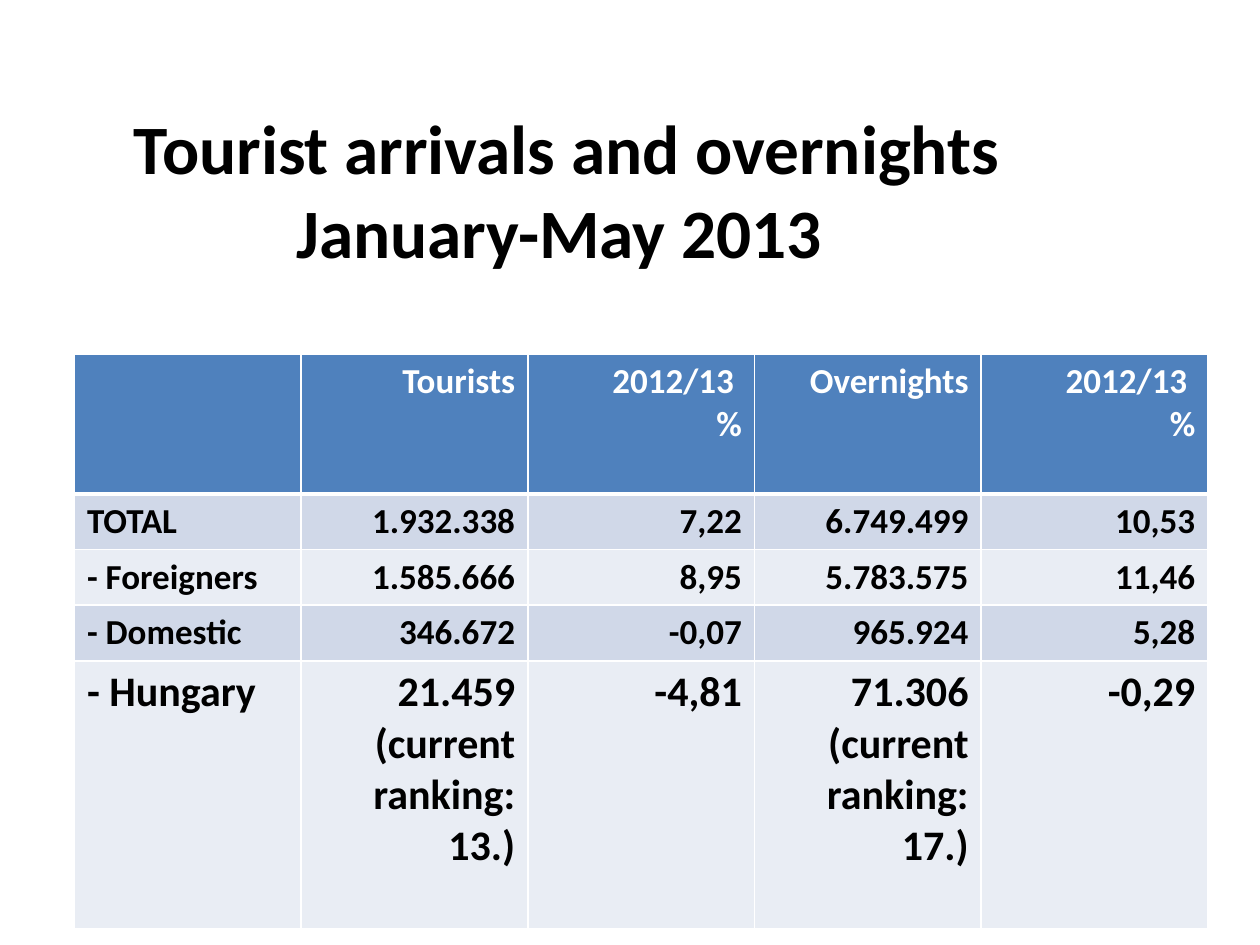
from lxml.etree import SubElement
from pptx import Presentation
from pptx.dml.color import RGBColor
from pptx.enum.text import MSO_ANCHOR, PP_ALIGN
from pptx.oxml.ns import qn
from pptx.util import Cm, Pt

COLORS = {"header": "4F81BD", "dark band": "D0D8E8", "light band": "E9EDF4",
          "white": "FFFFFF", "black": "000000"}
ROWS = [
    ["", "Tourists", "2012/13 \n%", "Overnights", "2012/13 \n%"],
    ["TOTAL", "1.932.338", "7,22", "6.749.499", "10,53"],
    ["- Foreigners", "1.585.666", "8,95", "5.783.575", "11,46"],
    ["- Domestic", "346.672", "-0,07", "965.924", "5,28"],
    ["- Hungary", "21.459 (current ranking: 13.)", "-4,81",
     "71.306\n(current ranking: 17.)", "-0,29"],
]
ROW_HEIGHTS = [2.82, 1.12, 1.12, 1.12, 5.4]
HUNGARY = len(ROWS) - 1


def write(tf, text, size, color, align):
    tf.text = text
    for p in tf.paragraphs:
        p.alignment = align
        p.font.name = "Calibri"
        p.font.size = Pt(size)
        p.font.bold = True
        p.font.color.rgb = RGBColor.from_string(COLORS[color])


def set_borders(cell, bottom):
    """Draw white cell borders, 1 pt except for the bottom one."""
    tcPr = cell._tc.get_or_add_tcPr()
    widths = {"a:lnL": 1, "a:lnR": 1, "a:lnT": 1, "a:lnB": bottom}
    for i, (tag, width) in enumerate(widths.items()):
        ln = SubElement(tcPr, qn(tag), w=str(Pt(width)))
        fill = SubElement(ln, qn("a:solidFill"))
        SubElement(fill, qn("a:srgbClr"), val=COLORS["white"])
        tcPr.insert(i, ln)


prs = Presentation()
prs.slide_width, prs.slide_height = Cm(25.4), Cm(19.05)
s = prs.slides.add_slide(prs.slide_layouts[6])

# Table
table = s.shapes.add_table(len(ROWS), len(ROWS[0]), Cm(1.5), Cm(7.14),
                           Cm(22.85), Cm(sum(ROW_HEIGHTS))).table
for col in table.columns:
    col.width = Cm(4.57)
for i, (row, height) in enumerate(zip(ROWS, ROW_HEIGHTS)):
    table.rows[i].height = Cm(height)
    band = "header" if i == 0 else "dark band" if i % 2 else "light band"
    for j, text in enumerate(row):
        cell = table.cell(i, j)
        cell.fill.solid()
        cell.fill.fore_color.rgb = RGBColor.from_string(COLORS[band])
        set_borders(cell, bottom=3 if i == 0 else 1)
        write(cell.text_frame, text, 24 if i == HUNGARY else 20,
              "white" if i == 0 else "black",
              PP_ALIGN.RIGHT if j else PP_ALIGN.LEFT)

# Title
tf = s.shapes.add_textbox(Cm(0), Cm(2.13), Cm(22.86), Cm(1.6)).text_frame
tf.word_wrap = True
tf.vertical_anchor = MSO_ANCHOR.TOP
tf.margin_top = tf.margin_bottom = Cm(0)
write(tf, "Tourist arrivals and overnights\nJanuary-May 2013 ", 39.6, "black",
      PP_ALIGN.CENTER)

prs.save("out.pptx")
